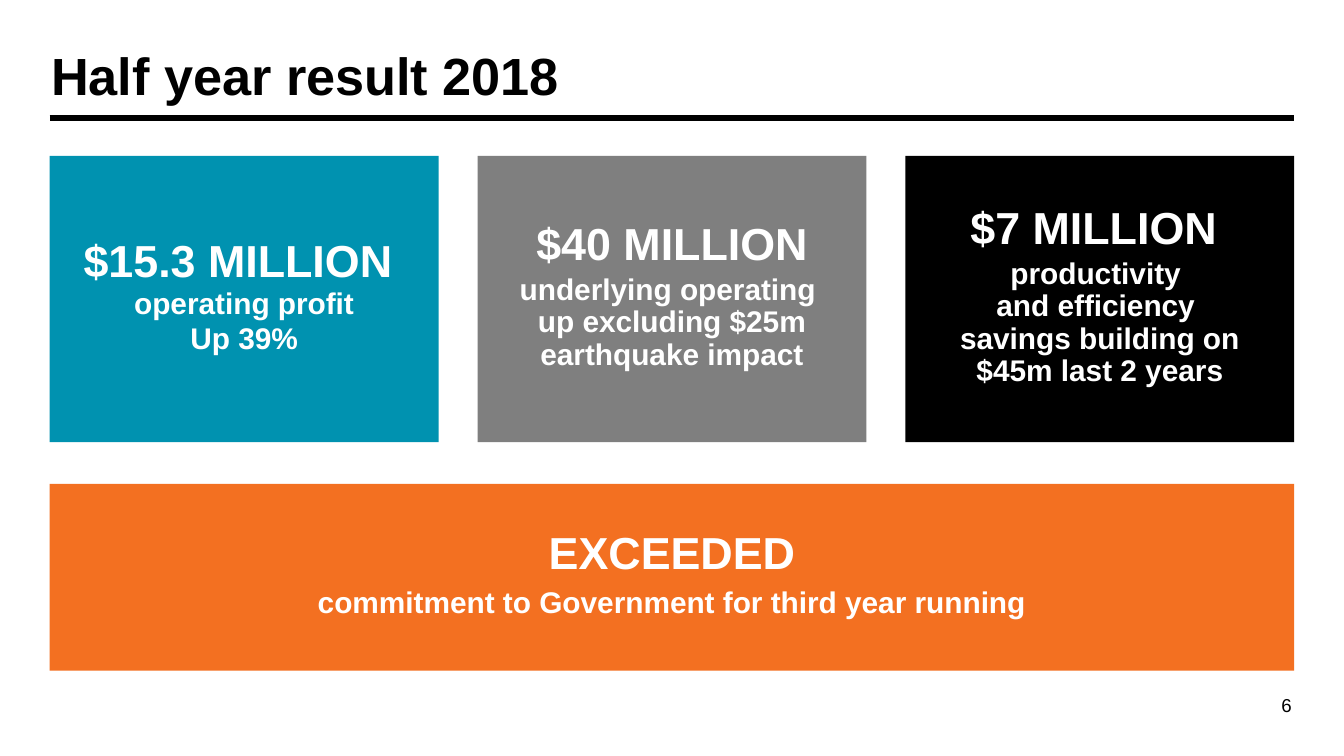
from pptx import Presentation
from pptx.dml.color import RGBColor
from pptx.enum.shapes import MSO_CONNECTOR as Link, MSO_SHAPE as Shape
from pptx.enum.text import MSO_ANCHOR as Anchor, PP_ALIGN as Align
from pptx.oxml.ns import qn
from pptx.util import Inches, Pt
from lxml.etree import SubElement

THEME = {
    "font": "Arial",
    "ink": "000000", "light": "FFFFFF",
    "teal": "0092B0", "grey": "7F7F7F", "orange": "F37021",
    "title": 28, "figure": 24, "body": 16, "page": 10,
}

TITLE = "Half year result 2018"
PAGE = "6"
# fill, figure, then body paragraphs: text, line spacing, space after
CARDS = [
    ("teal", "$15.3 MILLION ", [("operating profit", 0.8, 3), ("Up 39%", 0.8, 3)]),
    ("grey", "$40 MILLION",
     [("underlying operating \nup excluding $25m earthquake impact", 0.9, 0)]),
    ("ink", "$7 MILLION ",
     [("productivity \nand efficiency \nsavings building on $45m last 2 years", 0.9, 0)]),
]
BANNER = ("orange", "EXCEEDED",
          [("commitment to Government for third year running", 1.0, 12)])

LEFT, WIDE, GAP = 0.37, 9.26, 0.29
CARD_TOP, CARD_HIGH = 1.16, 2.13
BAN_TOP, BAN_HIGH = 3.6, 1.39
PAD = 0.12


def tint(name):
    return RGBColor.from_string(THEME[name])


def write(para, text, size, color, bold=True):
    """Add text as runs, with a line break at each newline."""
    for i, line in enumerate(text.split("\n")):
        if i:
            para.add_line_break()
        run = para.add_run()
        run.text = line
        font = run.font
        font.name, font.size, font.bold = THEME["font"], Pt(THEME[size]), bold
        font.color.rgb = tint(color)


def add_card(slide, card, x, y, w, h):
    fill, figure, body = card
    box = slide.shapes.add_shape(Shape.RECTANGLE, Inches(x), Inches(y), Inches(w), Inches(h))
    box.shadow.inherit = False
    box.fill.solid()
    box.fill.fore_color.rgb = tint(fill)
    box.line.fill.background()
    frame = box.text_frame
    frame.word_wrap = True
    frame.vertical_anchor = Anchor.MIDDLE
    frame.margin_left = frame.margin_right = Inches(PAD)
    frame.margin_top = frame.margin_bottom = Inches(PAD)
    for i, (text, lead, after) in enumerate([(figure, 0.8, 3)] + body):
        para = frame.add_paragraph() if i else frame.paragraphs[0]
        para.alignment = Align.CENTER
        para.line_spacing = lead
        para.space_before, para.space_after = Pt(0), Pt(after)
        write(para, text, "body" if i else "figure", "light")


def add_title(slide):
    title = slide.shapes.title
    title.left, title.top = Inches(0.28), Inches(0.23)
    title.width, title.height = Inches(7.87), Inches(0.65)
    frame = title.text_frame
    frame.word_wrap = True
    frame.vertical_anchor = Anchor.MIDDLE
    para = frame.paragraphs[0]
    para.alignment = Align.LEFT
    write(para, TITLE, "title", "ink")


def add_rule(slide):
    y = Inches(0.88)
    rule = slide.shapes.add_connector(Link.STRAIGHT, Inches(LEFT), y, Inches(LEFT + WIDE), y)
    rule.line.color.rgb = tint("ink")
    rule.line.width = Pt(3)
    SubElement(rule._element.spPr, qn("a:effectLst"))


def add_page(slide):
    box = slide.shapes.add_textbox(Inches(7.38), Inches(5.1), Inches(2.33), Inches(0.3))
    frame = box.text_frame
    frame.word_wrap = True
    frame.vertical_anchor = Anchor.MIDDLE
    para = frame.paragraphs[0]
    para.alignment = Align.RIGHT
    write(para, PAGE, "page", "ink", bold=False)


def main():
    deck = Presentation()
    deck.slide_width = Inches(10)
    deck.slide_height = Inches(10 * 9 / 16)
    slide = deck.slides.add_slide(deck.slide_layouts[5])
    add_title(slide)
    add_rule(slide)
    wide = (WIDE - GAP * (len(CARDS) - 1)) / len(CARDS)
    for i, card in enumerate(CARDS):
        add_card(slide, card, LEFT + i * (wide + GAP), CARD_TOP, wide, CARD_HIGH)
    add_card(slide, BANNER, LEFT, BAN_TOP, WIDE, BAN_HIGH)
    add_page(slide)
    deck.save("out.pptx")


if __name__ == "__main__":
    main()
